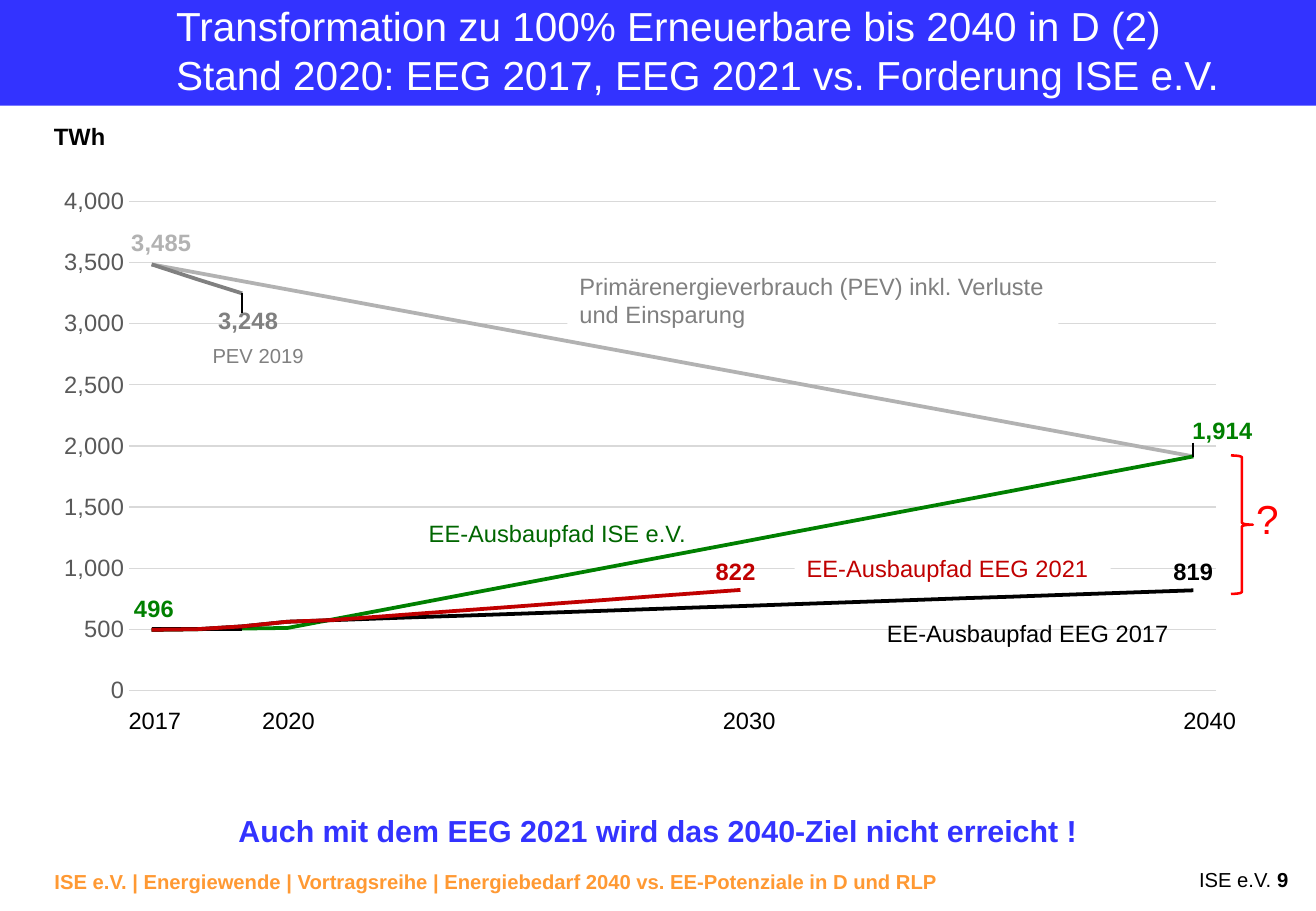
from lxml import etree
from pptx import Presentation, util as u
from pptx.chart.data import CategoryChartData
from pptx.dml.color import RGBColor
from pptx.enum import chart as ch, shapes, text
from pptx.oxml import parse_xml
from pptx.oxml.ns import nsdecls, qn

W, H = 10.83, 7.5
BLUE, ORANGE, BLACK, WHITE = "3333FF", "FF9933", "000000", "FFFFFF"
LIGHT, GRAY, GREEN, RED = "B2B2B2", "808080", "008000", "C00000"


def ramp(start, end, steps):
    """Rounded values from start to end in equal steps, both ends included."""
    return [round(start + (end - start) * i / steps) for i in range(steps + 1)]


YEARS = range(2017, 2041)
# name, colour, values, {point: (label position, x shift, y shift)}
SERIES = [
    ("PEV-Pfad", LIGHT, ramp(3485, 1914, 23), {0: ("ABOVE", 0.008, -0.005)}),
    ("PEV 2019", GRAY, [3485, 3364, 3248], {2: ("BELOW", 0.005, 0.018)}),
    ("ISE e.V.", GREEN, [496, 501, 506] + ramp(511, 1914, 20),
     {0: ("ABOVE", 0.002, -0.005), 23: ("ABOVE", 0.024, -0.013)}),
    ("EE-Bestand", BLACK, [500] * 3, {}),
    ("EEG 2017", BLACK, [496, 501, 524] + ramp(562.14, 818.64, 20), {23: ("ABOVE", 0, 0)}),
    ("EEG 2021", RED, [496, 501, 524, 562] + ramp(575.84, 603.24, 1)[:1]
     + ramp(603.24, 822.44, 8), {13: ("ABOVE", -0.004, 0)}),
]

# All boxes are left, top, width, height in percent of the slide
CHART = (3.14, 19.47, 92.15, 58.93)
PLOT = dict(x=0.0723, y=0.045, w=0.8964, h=0.911)  # shares of the chart
BRACE = (93.54, 50, 1.66, 15.2)
LEADERS = [(18.4, 32.2, 34.4), (90.65, 48.6, 50.2)]  # x, top, bottom
YEAR_LEFTS = {2017: 8.86, 2020: 19.02, 2030: 54.02, 2040: 89.01}
LABELS = [
    ("TWh", (3.14, 12.67, 5.82, 4.53), dict(bold=True, align="CENTER")),
    ("Primärenergieverbrauch (PEV) inkl. Verluste\vund Einsparung",
     (43.12, 29.2, 37.3, 7.6), dict(color=GRAY, fill=WHITE)),
    ("EE-Ausbaupfad ISE e.V.", (31.67, 56.27, 21.51, 4.53), dict(color="006600")),
    ("Auch mit dem EEG 2021 wird das 2040-Ziel nicht erreicht !", (0, 88.27, 100, 5.87),
     dict(size=18, color=BLUE, bold=True, align="CENTER", inset=0.07, wrap=True)),
    ("EE-Ausbaupfad EEG 2017", (66.48, 67.33, 23.36, 4.53), {}),
    ("EE-Ausbaupfad EEG 2021", (60.39, 60.13, 24.01, 4.53), dict(color=RED, fill=WHITE)),
    ("PEV 2019", (15.24, 37.07, 8.86, 4), dict(size=12, color=GRAY)),
] + [(str(y), (x, 76.8, 5.91, 4.53), {}) for y, x in YEAR_LEFTS.items()]


def rgb(hex_color):
    return RGBColor.from_string(hex_color)


def place(left, top, width, height):
    return [u.Inches(v * side / 100) for v, side in
            ((left, W), (top, H), (width, W), (height, H))]


def style(font, size, color, bold=False):
    font.name, font.size, font.bold = "Arial", u.Pt(size), bold
    font.color.rgb = rgb(color)


def label(parent, words, box, size=14, color=BLACK, bold=False, align="LEFT",
          fill=None, inset=None, wrap=False, spacing=None, bold_tail=None):
    sp = parent.add_textbox(*place(*box))
    if fill:
        sp.fill.solid()
        sp.fill.fore_color.rgb = rgb(fill)
    tf = sp.text_frame
    tf.word_wrap = wrap
    if inset is not None:
        tf.margin_left = tf.margin_right = tf.margin_top = tf.margin_bottom = u.Inches(inset)
    p = tf.paragraphs[0]
    p.text = words
    p.alignment = getattr(text.PP_ALIGN, align)
    p.line_spacing = spacing
    for r in p.runs:
        style(r.font, size, color, bold)
    if bold_tail:
        r = p.add_run()
        r.text = bold_tail
        style(r.font, size, color, True)


def set_layout(parent, index, **shares):
    """Put a manual layout into a chart element at the given child index."""
    layout = parse_xml(f"<c:layout {nsdecls('c')}><c:manualLayout/></c:layout>")
    modes = {"layoutTarget": "inner", "xMode": "edge", "yMode": "edge"} if "w" in shares else {}
    for tag, value in {**modes, **shares}.items():
        etree.SubElement(layout[0], qn(f"c:{tag}")).set("val", str(value))
    for old in parent.findall(qn("c:layout")):
        parent.remove(old)
    parent.insert(index, layout)


def add_line_chart(s):
    data = CategoryChartData(number_format="#,##0")
    data.categories = [str(y) for y in YEARS]
    for name, _, values, _ in SERIES:
        data.add_series(name, values + [None] * (len(YEARS) - len(values)))
    chart = s.shapes.add_chart(ch.XL_CHART_TYPE.LINE, *place(*CHART), data).chart
    chart.has_legend = chart.has_title = False
    style(chart.font, 10, BLACK)
    set_layout(chart.plots[0]._element.getparent(), 0, **PLOT)
    chart.plots[0].vary_by_categories = False
    chart.category_axis.visible = False

    axis = chart.value_axis
    axis.minimum_scale, axis.maximum_scale, axis.major_unit = 0, 4000, 500
    axis.major_tick_mark = ch.XL_TICK_MARK.NONE
    axis.format.line.fill.background()
    axis.major_gridlines.format.line.color.rgb = rgb("D9D9D9")
    axis.major_gridlines.format.line.width = u.Pt(0.75)
    axis.tick_labels.number_format = "#,##0"
    axis.tick_labels.number_format_is_linked = False
    style(axis.tick_labels.font, 14, "595959")

    for series, (_, color, _, marks) in zip(chart.series, SERIES):
        series.smooth = False
        series.marker.style = ch.XL_MARKER_STYLE.NONE
        series.format.line.color.rgb = rgb(color)
        series.format.line.width = u.Pt(2.25)
        for point, (position, dx, dy) in marks.items():
            mark = series.points[point].data_label
            style(mark.font, 14, color, True)
            mark.position = getattr(ch.XL_LABEL_POSITION, position)
            if dx or dy:
                set_layout(mark._dLbl, 1, x=dx, y=dy)


def add_leader(s, x, top, bottom):
    left, y1, _, height = place(x, top, 0, bottom - top)
    line = s.shapes.add_connector(shapes.MSO_CONNECTOR.STRAIGHT, left, y1, left, y1 + height)
    line.line.color.rgb = rgb(BLACK)
    line.line.width = u.Pt(0.75)
    etree.SubElement(line._element.spPr, qn("a:effectLst"))


def add_gap_brace(s):
    group = s.shapes.add_group_shape().shapes
    sp = group.add_shape(shapes.MSO_SHAPE.RIGHT_BRACE, *place(*BRACE))
    sp.shadow.inherit = False
    sp.fill.background()
    sp.line.color.rgb = rgb("FF0000")
    sp.line.width = u.Pt(1.5)
    label(group, "?", (94.55, 53.6, 2.95, 6.67), size=24, color="FF0000")


def main():
    prs = Presentation()
    prs.slide_width, prs.slide_height = u.Inches(W), u.Inches(H)
    s = prs.slides.add_slide(prs.slide_layouts[6])

    band = s.shapes.add_shape(shapes.MSO_SHAPE.RECTANGLE, *place(0, 0, 100, 11.6))
    band.shadow.inherit = False
    band.fill.solid()
    band.fill.fore_color.rgb = rgb(BLUE)
    band.line.fill.background()
    label(s.shapes, "Transformation zu 100% Erneuerbare bis 2040 in D (2)\v"
          "Stand 2020: EEG 2017, EEG 2021 vs. Forderung ISE e.V.",
          (13.39, 0.13, 84.4, 10.8), size=24, color=WHITE, inset=0, wrap=True)
    label(s.shapes, "ISE e.V. | Energiewende | Vortragsreihe | "
          "Energiebedarf 2040 vs. EE-Potenziale in D und RLP",
          (3.23, 94.8, 69.25, 4), size=12, color=ORANGE, bold=True, wrap=True)
    label(s.shapes, "ISE e.V. ", (61.5, 94.8, 37.3, 3.73), size=12, align="RIGHT",
          wrap=True, spacing=0.9, bold_tail="9")

    add_line_chart(s)
    for leader in LEADERS:
        add_leader(s, *leader)
    for words, box, look in LABELS:
        label(s.shapes, words, box, **look)
    add_gap_brace(s)
    prs.save("out.pptx")


if __name__ == "__main__":
    main()
